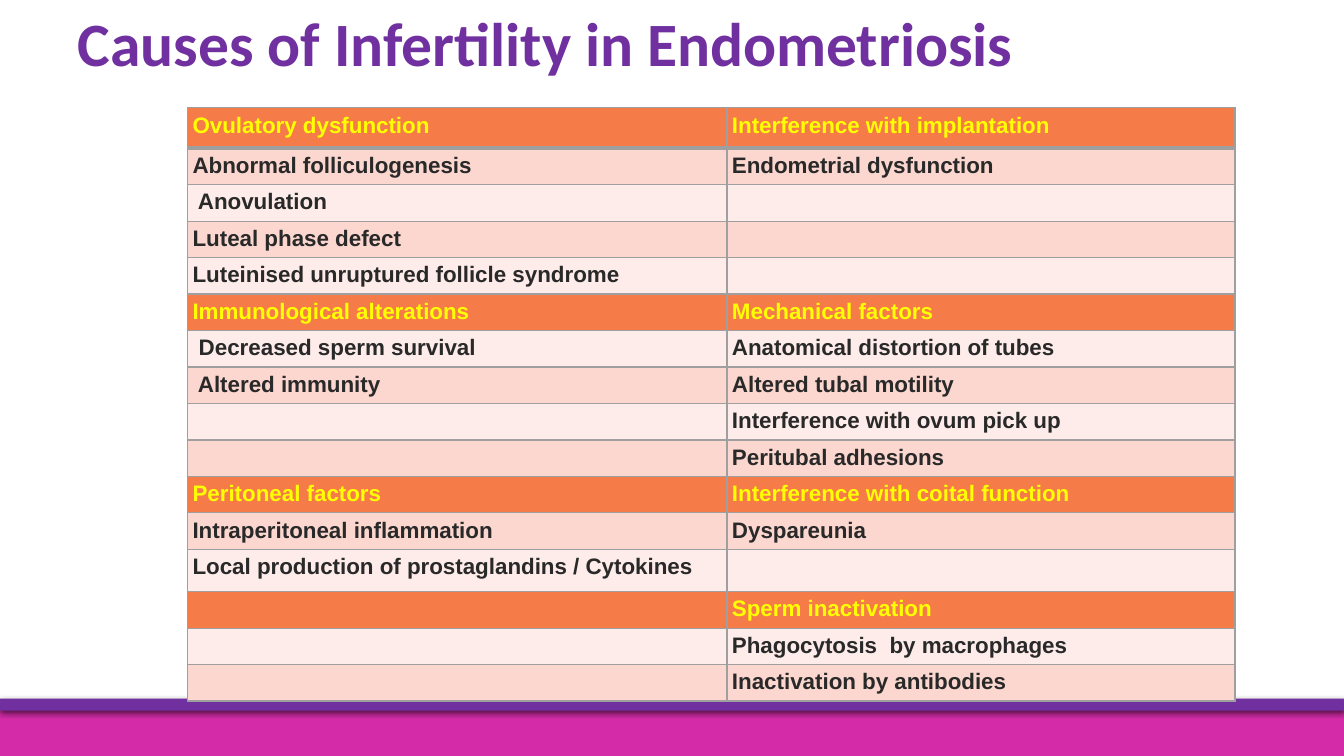
from lxml import etree
from pptx import Presentation
from pptx import util as u
from pptx.dml.color import RGBColor
from pptx.enum import shapes, text
from pptx.oxml.ns import qn

# Content
TITLE = "Causes of Infertility in Endometriosis"
SECTIONS = [  # (headings, rows beneath them)
    (("Ovulatory dysfunction", "Interference with implantation"), [
        ("Abnormal folliculogenesis", "Endometrial dysfunction"),
        (" Anovulation", ""),
        ("Luteal phase defect", ""),
        ("Luteinised unruptured follicle syndrome", "")]),
    (("Immunological alterations", "Mechanical factors"), [
        (" Decreased sperm survival", "Anatomical distortion of tubes"),
        (" Altered immunity", "Altered tubal motility"),
        ("", "Interference with ovum pick up"),
        ("", "Peritubal adhesions")]),
    (("Peritoneal factors", "Interference with coital function"), [
        ("Intraperitoneal inflammation", "Dyspareunia"),
        ("Local production of prostaglandins / Cytokines", "")]),
    (("", "Sperm inactivation"), [
        ("", "Phagocytosis  by macrophages"),
        ("", "Inactivation by antibodies")]),
]

# Colours
PURPLE = RGBColor(0x70, 0x30, 0xA0)
MAGENTA = RGBColor(0xD4, 0x2C, 0xA8)
ORANGE = RGBColor(0xF5, 0x7B, 0x49)
YELLOW = RGBColor(0xFF, 0xFF, 0x00)
INK = RGBColor(0x29, 0x29, 0x29)
BANDS = [RGBColor(0xFD, 0xEC, 0xE9), RGBColor(0xFB, 0xD7, 0xCF)]
GREY = RGBColor(0x9F, 0x9F, 0x9F)

# Layout in inches
SLIDE_W, SLIDE_H = 13.33, 7.5
BARS = [(7.03, 0.48, MAGENTA), (6.93, 0.12, PURPLE)]  # top, height, colour
TABLE_LEFT, TABLE_TOP, TABLE_H = 1.86, 1.07, 5.89
COLUMNS = [5.35, 5.04]
TALL_ROWS = {0: 0.4, 12: 0.42}
CELL_MARGIN = 0.05


def add_bar(slide, top, height, colour):
    bar = slide.shapes.add_shape(shapes.MSO_SHAPE.RECTANGLE, 0, u.Inches(top),
                                 u.Inches(SLIDE_W), u.Inches(height))
    bar.fill.solid()
    bar.fill.fore_color.rgb = colour
    bar.line.fill.background()
    bar.shadow.inherit = False
    effects = bar.element.spPr.find(qn("a:effectLst"))
    shadow = etree.SubElement(effects, qn("a:outerShdw"), blurRad=str(u.Pt(4.5)),
                              dist=str(u.Pt(1.5)), dir="5400000", rotWithShape="0")
    black = etree.SubElement(shadow, qn("a:srgbClr"), val="000000")
    etree.SubElement(black, qn("a:alpha"), val="63000")


def add_borders(cell, top, bottom):
    widths = {"L": 1, "R": 1, "T": top, "B": bottom}
    for side, width in widths.items():
        line = etree.SubElement(cell._tc.get_or_add_tcPr(), qn(f"a:ln{side}"),
                                w=str(u.Pt(width)))
        fill = etree.SubElement(line, qn("a:solidFill"))
        etree.SubElement(fill, qn("a:srgbClr"), val=str(GREY))


def fill_cell(cell, wording, row, is_heading):
    add_borders(cell, top=3 if row == 1 else 1, bottom=3 if row == 0 else 1)
    cell.fill.solid()
    cell.fill.fore_color.rgb = ORANGE if is_heading else BANDS[row % 2]
    cell.margin_left = cell.margin_right = u.Inches(CELL_MARGIN)
    # Empty cells need no vertical margin, so they never stretch their row
    cell.margin_top = cell.margin_bottom = u.Inches(CELL_MARGIN if wording else 0)
    cell.text_frame.text = wording
    for run in cell.text_frame.paragraphs[0].runs:
        run.font.name, run.font.size, run.font.bold = "Arial", u.Pt(16), True
        run.font.color.rgb = YELLOW if is_heading else INK


def add_causes(slide):
    rows = []
    for headings, causes in SECTIONS:
        rows.append((headings, True))
        rows += [(pair, False) for pair in causes]
    frame = slide.shapes.add_table(
        len(rows), len(COLUMNS), u.Inches(TABLE_LEFT), u.Inches(TABLE_TOP),
        u.Inches(sum(COLUMNS)), u.Inches(TABLE_H))
    causes_table = frame.table
    for column, width in zip(causes_table.columns, COLUMNS):
        column.width = u.Inches(width)
    usual = (TABLE_H - sum(TALL_ROWS.values())) / (len(rows) - len(TALL_ROWS))
    for row, (pair, is_heading) in enumerate(rows):
        causes_table.rows[row].height = u.Inches(TALL_ROWS.get(row, usual))
        for column, wording in enumerate(pair):
            fill_cell(causes_table.cell(row, column), wording, row, is_heading)


def add_title(slide):
    title = slide.shapes.title
    title.left, title.top = u.Inches(0.67), 0
    title.width, title.height = u.Inches(12), u.Inches(1.25)
    title.text_frame.text = TITLE
    title.text_frame.vertical_anchor = text.MSO_ANCHOR.TOP
    heading = title.text_frame.paragraphs[0]
    heading.alignment = text.PP_ALIGN.LEFT
    font = heading.runs[0].font
    font.name, font.size, font.bold = "Calibri", u.Pt(44), True
    font.color.rgb = PURPLE


def main():
    deck = Presentation()
    deck.slide_width, deck.slide_height = u.Inches(SLIDE_W), u.Inches(SLIDE_H)
    slide = deck.slides.add_slide(deck.slide_layouts.get_by_name("Title Only"))
    add_title(slide)
    for bar in BARS:
        add_bar(slide, *bar)
    add_causes(slide)
    deck.save("out.pptx")


if __name__ == "__main__":
    main()
